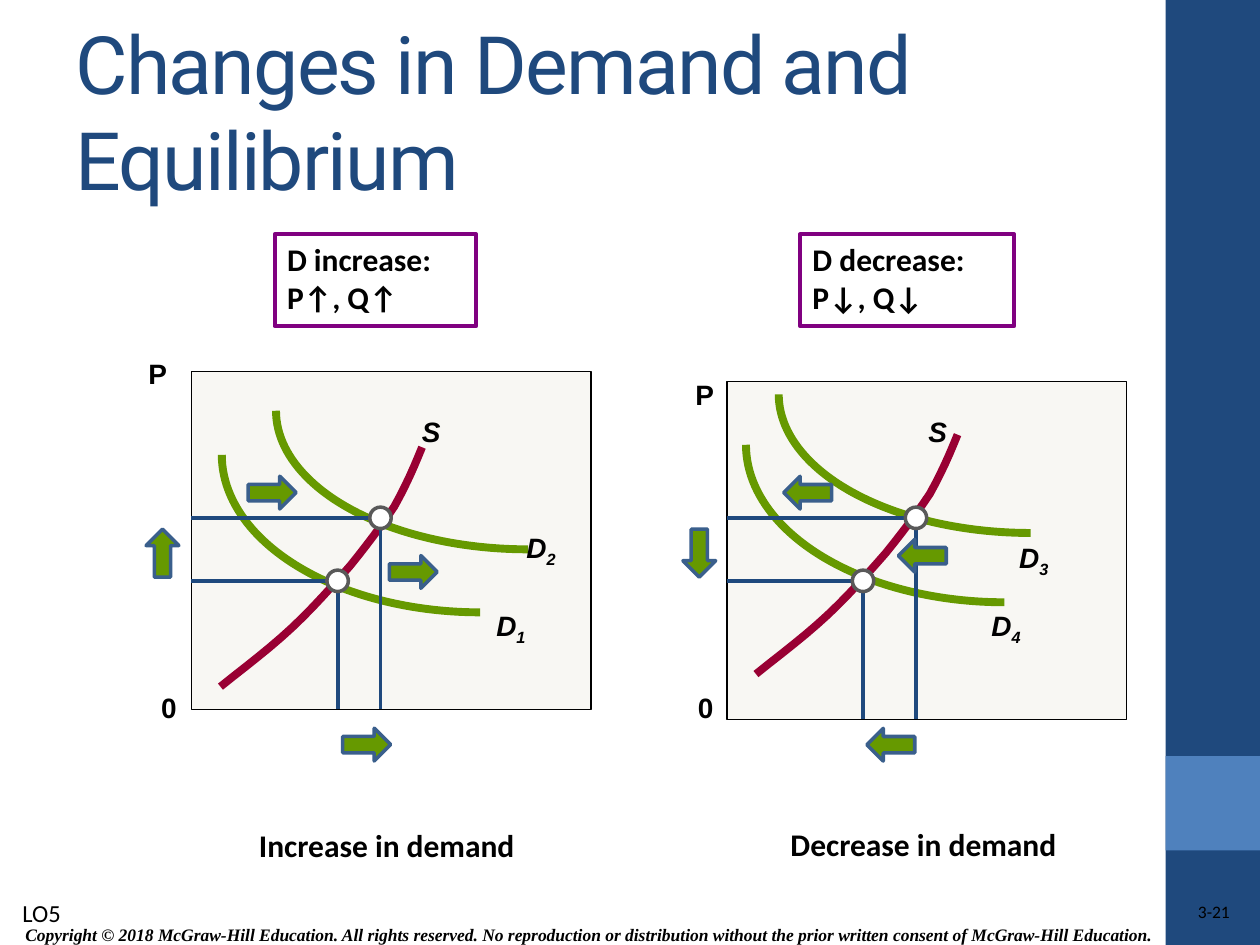
from dataclasses import dataclass

from lxml.etree import SubElement
from pptx import Presentation
from pptx.dml.color import RGBColor
from pptx.enum.shapes import MSO_CONNECTOR as Connector, MSO_SHAPE as Shape
from pptx.enum.text import MSO_ANCHOR as Anchor, MSO_AUTO_SIZE as AutoSize, PP_ALIGN as Align
from pptx.oxml.ns import qn
from pptx.util import Inches, Pt

Point = tuple[float, float]
Box = tuple[float, float, float, float]


@dataclass(frozen=True)
class Theme:
    navy: str = "1F497D"
    blue: str = "4F81BD"
    black: str = "000000"
    white: str = "FFFFFF"
    plot: str = "F8F7F3"
    demand: str = "669900"
    supply: str = "990033"
    arrow_edge: str = "3A5F8C"
    dot_edge: str = "595959"
    summary_edge: str = "800080"
    body: str = "Calibri"
    heading: str = "Roboto"
    label: str = "Arial"
    legal: str = "Times New Roman"
    title_size: int = 46
    text_size: int = 18
    label_size: int = 16
    objective_size: int = 14
    small_size: int = 10


@dataclass(frozen=True)
class Label:
    text: str
    at: Point
    subscript: str = ""
    italic: bool = True


@dataclass(frozen=True)
class Arrow:
    at: Point
    rotation: int


@dataclass(frozen=True)
class Panel:
    frame: Box
    supply_start: Point
    demand_arcs: tuple[Box, ...]
    equilibria: tuple[Point, ...]
    arrows: tuple[Arrow, ...]
    labels: tuple[Label, ...]
    summary: str
    summary_box: Box
    caption: str
    caption_box: Box


THEME = Theme()
RIGHT, DOWN, LEFT, UP = 0, 90, 180, 270
ARROW_WIDTH, ARROW_HEIGHT, DOT = 0.38, 0.26, 0.17
SUPPLY_OFFSETS = (
    (0, 0), (-0.06, 0.15), (-0.13, 0.31), (-0.22, 0.47), (-0.32, 0.62), (-0.44, 0.78),
    (-0.57, 0.94), (-0.71, 1.1), (-0.86, 1.27), (-1.03, 1.43), (-1.2, 1.59),
    (-1.4, 1.74), (-1.6, 1.9),
)

PANELS = (
    Panel(
        frame=(1.52, 2.95, 3.17, 2.68),
        supply_start=(3.35, 3.55),
        demand_arcs=((1.76, 2.36, 4.1, 2.5), (2.19, 2.16, 4, 2.2)),
        equilibria=((2.68, 4.61), (3.02, 4.11)),
        arrows=(Arrow((1.97, 3.78), RIGHT), Arrow((3.09, 4.41), RIGHT),
                Arrow((2.72, 5.78), RIGHT), Arrow((1.1, 4.26), UP)),
        labels=(Label("P", (1.08, 2.78), italic=False), Label("0", (1.18, 5.43), italic=False),
                Label("S", (3.25, 3.24)), Label("D", (3.84, 4.78), "1"),
                Label("D", (4.08, 4.16), "2")),
        summary="D increase:\nP↑, Q↑",
        summary_box=(2.18, 1.86, 1.6, 0.73),
        caption="Increase in demand",
        caption_box=(1.77, 6.51, 2.6, 0.4),
    ),
    Panel(
        frame=(5.77, 3.03, 3.17, 2.68),
        supply_start=(7.6, 3.45),
        demand_arcs=((5.92, 2.28, 4.1, 2.5), (6.18, 2.03, 4, 2.2)),
        equilibria=((6.85, 4.61), (7.27, 4.11)),
        arrows=(Arrow((6.22, 3.78), LEFT), Arrow((7.13, 4.28), LEFT),
                Arrow((6.88, 5.78), LEFT), Arrow((5.36, 4.26), DOWN)),
        labels=(Label("P", (5.42, 2.95), italic=False), Label("0", (5.44, 5.43), italic=False),
                Label("S", (7.27, 3.24)), Label("D", (7.77, 4.78), "4"),
                Label("D", (7.99, 4.24), "3")),
        summary="D decrease:\nP↓, Q↓",
        summary_box=(6.35, 1.86, 1.7, 0.73),
        caption="Decrease in demand",
        caption_box=(5.98, 6.5, 2.7, 0.4),
    ),
)


def color(value: str) -> RGBColor:
    return RGBColor.from_string(value)


def write(frame, text: str, *, font=THEME.body, size=THEME.text_size, ink=THEME.black,
          bold=False, italic=False, align=Align.LEFT, subscript="", spacing=0) -> None:
    frame.text = text
    for paragraph in frame.paragraphs:
        paragraph.alignment = align
        if subscript:
            lowered = paragraph.add_run()
            lowered.text = subscript
            lowered._r.get_or_add_rPr().set("baseline", "-25000")
        for run in paragraph.runs:
            run.font.name, run.font.size = font, Pt(size)
            run.font.bold, run.font.italic = bold, italic
            run.font.color.rgb = color(ink)
            if spacing:
                run._r.get_or_add_rPr().set("spc", str(spacing * 100))


def add_text(slide, box: Box, text: str, *, wrap=True, anchor=Anchor.TOP, **text_format):
    shape = slide.shapes.add_textbox(*map(Inches, box))
    shape.text_frame.word_wrap = wrap
    shape.text_frame.vertical_anchor = anchor
    write(shape.text_frame, text, **text_format)
    return shape


def style(shape, fill: str = "", line: str = "", width: float = 0) -> None:
    shape.shadow.inherit = False
    if fill:
        shape.fill.solid()
        shape.fill.fore_color.rgb = color(fill)
    else:
        shape.fill.background()
    if line:
        shape.line.color.rgb = color(line)
        shape.line.width = Pt(width)
    else:
        shape.line.fill.background()


def add_shape(slide, kind: Shape, box: Box, *, rotation=0, **look) -> None:
    shape = slide.shapes.add_shape(kind, *map(Inches, box))
    shape.rotation = rotation
    style(shape, **look)


def add_guide(slide, start: Point, end: Point) -> None:
    line = slide.shapes.add_connector(Connector.STRAIGHT, *map(Inches, start + end))
    line.line.color.rgb = color(THEME.navy)
    line.line.width = Pt(2.25)
    SubElement(line._element.spPr, qn("a:effectLst"))


def cubic(points: tuple[Point, ...], t: float) -> Point:
    weights = ((1 - t) ** 3, 3 * t * (1 - t) ** 2, 3 * t * t * (1 - t), t ** 3)
    return tuple(sum(w * p[axis] for w, p in zip(weights, points)) for axis in (0, 1))


def add_supply(slide, start: Point) -> None:
    x, y = start
    points = [(Inches(x + dx), Inches(y + dy))
              for first in range(0, len(SUPPLY_OFFSETS) - 1, 3)
              for dx, dy in (cubic(SUPPLY_OFFSETS[first:first + 4], step / 6)
                             for step in range(1, 7))]
    builder = slide.shapes.build_freeform(Inches(x), Inches(y))
    builder.add_line_segments(points, close=False)
    style(builder.convert_to_shape(), line=THEME.supply, width=4.5)


def add_panel(slide, panel: Panel) -> None:
    left, top, _, height = panel.frame
    add_shape(slide, Shape.RECTANGLE, panel.frame, fill=THEME.plot, line=THEME.black, width=0.75)
    add_supply(slide, panel.supply_start)
    for box in panel.demand_arcs:
        add_shape(slide, Shape.ARC, box, rotation=180, line=THEME.demand, width=4.5)
    for x, y in panel.equilibria:
        add_guide(slide, (x, y), (left, y))
        add_guide(slide, (x, y), (x, top + height))
    for x, y in panel.equilibria:
        add_shape(slide, Shape.OVAL, (x - DOT / 2, y - DOT / 2, DOT, DOT),
                  fill=THEME.white, line=THEME.dot_edge, width=2)
    for arrow in panel.arrows:
        add_shape(slide, Shape.RIGHT_ARROW, (*arrow.at, ARROW_WIDTH, ARROW_HEIGHT),
                  rotation=arrow.rotation, fill=THEME.demand, line=THEME.arrow_edge, width=2)
    for label in panel.labels:
        add_text(slide, (*label.at, 0.45 if label.subscript else 0.35, 0.37), label.text,
                 wrap=False, font=THEME.label, size=THEME.label_size, bold=True,
                 italic=label.italic, subscript=label.subscript)
    summary = add_text(slide, panel.summary_box, panel.summary, bold=True)
    summary.line.color.rgb = color(THEME.summary_edge)
    summary.line.width = Pt(2.25)
    add_text(slide, panel.caption_box, panel.caption, bold=True, align=Align.CENTER)


def main() -> None:
    presentation = Presentation()
    presentation.slide_width, presentation.slide_height = Inches(10), Inches(7.5)
    slide = presentation.slides.add_slide(presentation.slide_layouts[5])

    add_shape(slide, Shape.RECTANGLE, (9.25, 0, 0.75, 7.5), fill=THEME.navy)
    add_shape(slide, Shape.RECTANGLE, (9.25, 6, 0.75, 0.75), fill=THEME.blue)

    title = slide.shapes.title
    title.left, title.top, title.width, title.height = map(Inches, (0.5, 0.25, 9, 1.25))
    title.text_frame.auto_size = AutoSize.NONE
    title.text_frame.vertical_anchor = Anchor.MIDDLE
    write(title.text_frame, "Changes in Demand and Equilibrium", font=THEME.heading,
          size=THEME.title_size, ink=THEME.navy, spacing=-1)

    for panel in PANELS:
        add_panel(slide, panel)

    add_text(slide, (0.08, 7.08, 0.53, 0.34), "LO5", size=THEME.objective_size)
    add_text(slide, (0.06, 7.28, 9.22, 0.28),
             "Copyright © 2018 McGraw-Hill Education. All rights reserved. No reproduction or "
             "distribution without the prior written consent of McGraw-Hill Education.",
             anchor=Anchor.MIDDLE, font=THEME.legal, size=THEME.small_size,
             bold=True, italic=True, align=Align.CENTER)
    number = add_text(slide, (7.81, 7.15, 1.95, 0.2), "3-21",
                      size=THEME.small_size, align=Align.RIGHT).text_frame
    number.margin_left = number.margin_top = number.margin_right = number.margin_bottom = 0

    presentation.save("out.pptx")


if __name__ == "__main__":
    main()
